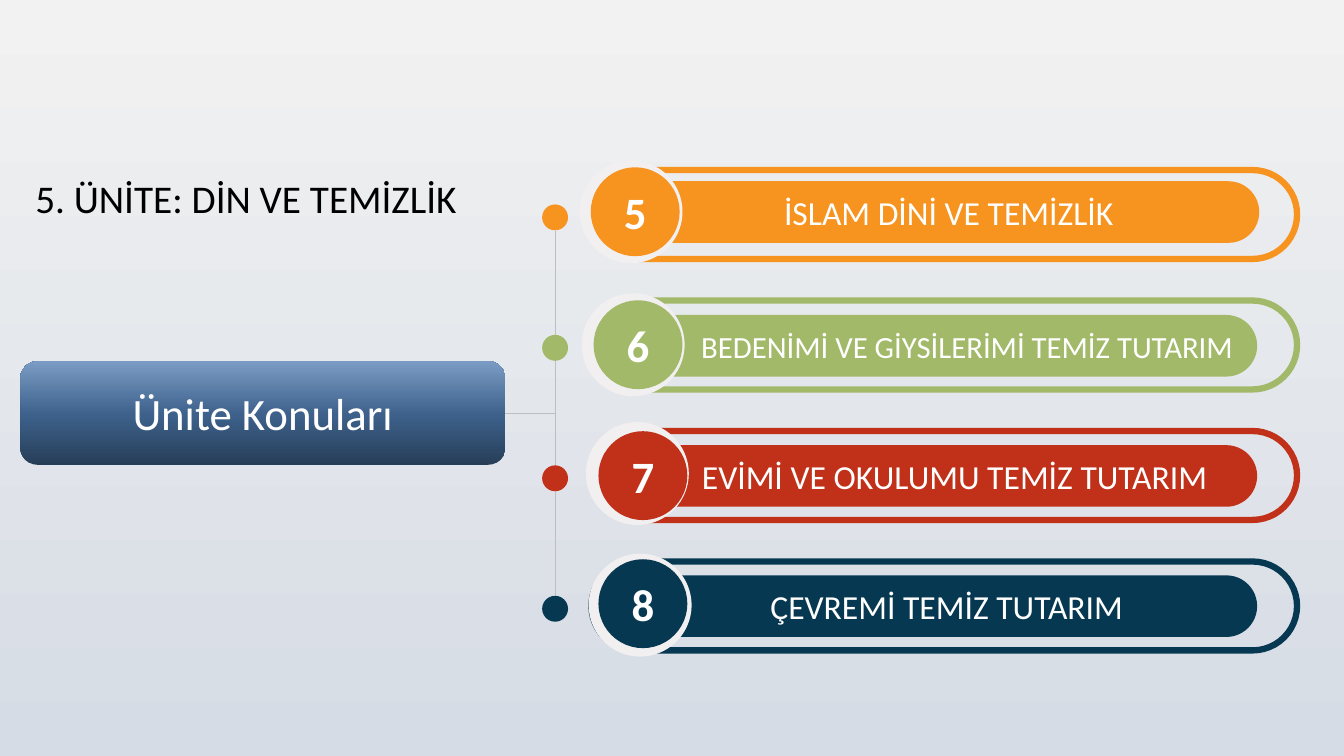
import copy
import pptx
import pptx.util
import pptx.dml.color
import pptx.enum.shapes
import pptx.enum.text
import pptx.oxml

Pt = pptx.util.Pt
Kind = pptx.enum.shapes.MSO_SHAPE
Align = pptx.enum.text.PP_ALIGN
Anchor = pptx.enum.text.MSO_ANCHOR


def tint(code):
    return pptx.dml.color.RGBColor.from_string(code)


def draw(kind, left, top, width, height, fill=None, text="", size=24, bold=False):
    shape = deck.shapes.add_shape(kind, Pt(left), Pt(top), Pt(width), Pt(height))
    shape.shadow.inherit = False
    shape.line.fill.background()
    if fill:
        shape.fill.solid()
        shape.fill.fore_color.rgb = tint(fill)
    else:
        shape.fill.background()
    if text:
        frame = shape.text_frame
        frame.word_wrap = True
        frame.vertical_anchor = Anchor.MIDDLE
        para = frame.paragraphs[0]
        para.text = text
        para.alignment = Align.CENTER
        para.font.name = "Calibri"
        para.font.size = Pt(size)
        para.font.bold = bold
        para.font.color.rgb = tint("FFFFFF")
    return shape


show = pptx.Presentation()
show.slide_width, show.slide_height = Pt(960), Pt(540)
deck = show.slides.add_slide(show.slide_layouts[5])

# Background
back = deck.background.fill
back.gradient()
back.gradient_angle = 270
for stop, code in zip(back.gradient_stops, ("F2F2F2", "D6DCE5")):
    stop.color.rgb = tint(code)

# Unit title
title = deck.shapes.title
title.left, title.top, title.width, title.height = Pt(18), Pt(121), Pt(319), Pt(41)
frame = title.text_frame
frame.word_wrap = False
frame.auto_size = pptx.enum.text.MSO_AUTO_SIZE.SHAPE_TO_FIT_TEXT
frame.vertical_anchor = Anchor.TOP
para = frame.paragraphs[0]
para.text = "5. ÜNİTE: DİN VE TEMİZLİK"
para.alignment = Align.LEFT
para.font.name = "Calibri"
para.font.size = Pt(28)
para.font.color.rgb = tint("000000")

# Thin lines from the button to the topics
for x1, y1, x2, y2 in ((396.5, 165, 396.5, 425.5), (361, 295, 396.5, 295)):
    line = deck.shapes.add_connector(
        pptx.enum.shapes.MSO_CONNECTOR.STRAIGHT, Pt(x1), Pt(y1), Pt(x2), Pt(y2))
    line.line.color.rgb = tint("BEBEBE")
    line.line.width = Pt(0.5)
    line._element.spPr.append(pptx.oxml.parse_xml(
        '<a:effectLst xmlns:a="http://schemas.openxmlformats.org/drawingml/2006/main"/>'))

# Topics: number, text, colour, size, extra left inset,
# bar place, halo place, disc place
topics = (
    ("5", "İSLAM DİNİ VE TEMİZLİK", "F7931F", 24, 0,
     (456, 129.5), (414, 114.5), (422, 119.5)),
    ("6", "BEDENİMİ VE GİYSİLERİMİ TEMİZ TUTARIM", "A2B969", 22, 29,
     (454.5, 225), (415.5, 209.5), (424, 214.5)),
    ("7", "EVİMİ VE OKULUMU TEMİZ TUTARIM", "C13018", 24, 11,
     (454.5, 318), (418.5, 301.5), (427.5, 308)),
    ("8", "ÇEVREMİ TEMİZ TUTARIM", "063951", 24, 0,
     (454.5, 411), (420.5, 395.5), (427.5, 399.5)),
)
for row, (digit, text, hue, size, inset, bar, halo, disc) in enumerate(topics):
    top = 121.5 + 93.2 * row
    draw(Kind.OVAL, 387.25, top + 24.5, 18.5, 18.5, hue)
    ring = draw(Kind.ROUNDED_RECTANGLE, 422.5, top, 504, 63.5)
    ring.adjustments[0] = 0.5
    ring.line.color.rgb = tint(hue)
    ring.line.width = Pt(4.5)
    label = draw(Kind.ROUNDED_RECTANGLE, *bar, 443.5, 44, hue, text, size)
    label.adjustments[0] = 0.5
    label.text_frame.margin_left = Pt(7.2 + inset)
    draw(Kind.OVAL, *halo, 73.5, 73.5, "F1EFF0")
    draw(Kind.OVAL, *disc, 63.5, 63.5, hue, digit, 32, True)

# Button with a three-step gradient
button = draw(Kind.ROUNDED_RECTANGLE, 14.5, 258, 346.5, 74, None, "Ünite Konuları", 32)
button.fill.gradient()
button.fill.gradient_angle = 90
steps = button._element.xpath(".//a:gsLst")[0]
steps.insert(1, copy.deepcopy(steps[0]))
shades = ((0, "273E58"), (0.48, "3D618B"), (1, "7A9CC4"))
for stop, (place, code) in zip(button.fill.gradient_stops, shades):
    stop.position = place
    stop.color.rgb = tint(code)

show.save("out.pptx")
